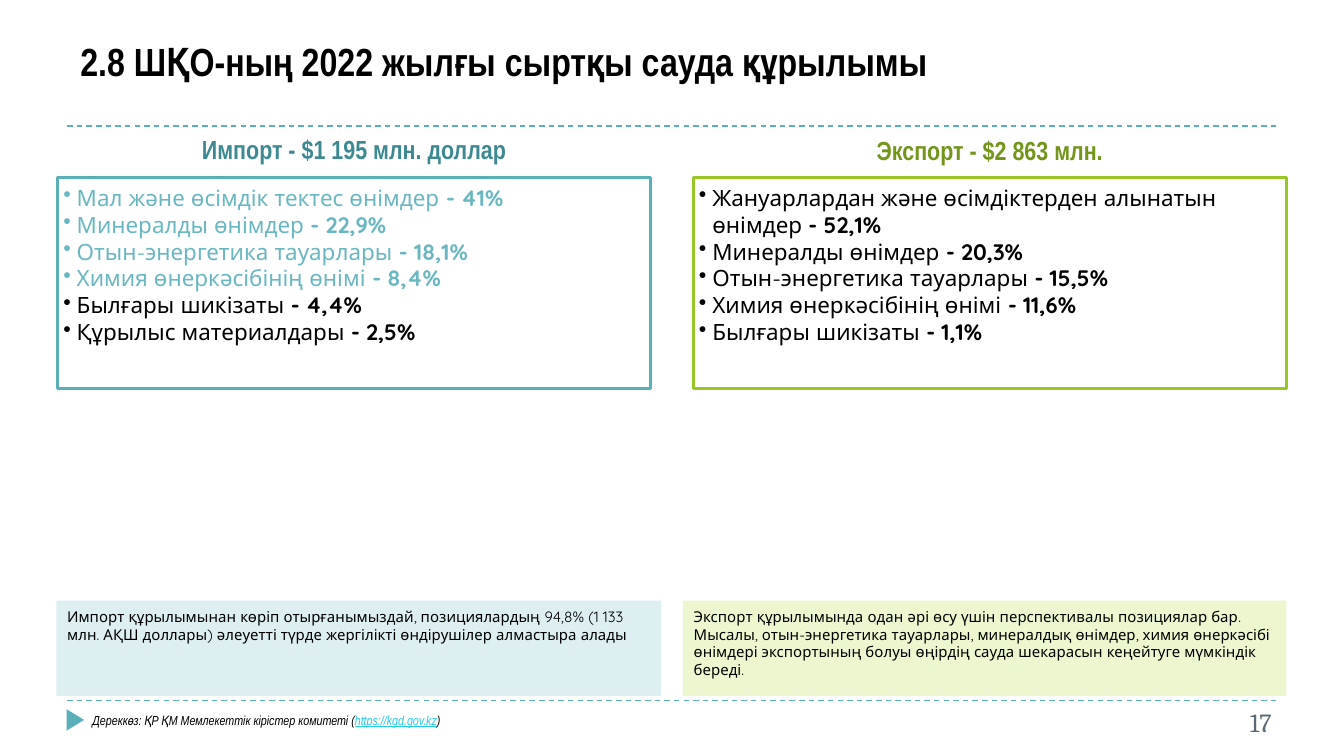
import pptx
import pptx.util
import pptx.dml.color
import pptx.enum.dml
import pptx.enum.shapes
import pptx.enum.text
import pptx.oxml.ns
import lxml.etree

Pt = pptx.util.Pt
SHAPE = pptx.enum.shapes.MSO_SHAPE
ALIGN = pptx.enum.text.PP_ALIGN
ANCHOR = pptx.enum.text.MSO_ANCHOR

COLORS = {
    "teal": "59B0B9", "teal_text": "69B7C0", "teal_dark": "3D8991", "teal_pale": "DEEFF1",
    "green": "98C723", "green_dark": "72951A", "green_pale": "ECF7D0",
    "black": "000000", "white": "FFFFFF", "gray": "5B6973", "link": "26CBEC",
}


def rgb(name):
    return pptx.dml.color.RGBColor.from_string(COLORS[name])


class SlideBuilder:
    head_font = "Arial Narrow"
    body_font = "Quicksand"
    number_font = "Cambria"

    def __init__(self, slide):
        self.s = slide

    def add_run(self, p, text, font, size, color="black", **style):
        r = p.add_run()
        r.text = text
        r.font.name = font
        r.font.size = Pt(size)
        r.font.color.rgb = rgb(color)
        for key, value in style.items():
            setattr(r.font, key, value)

    def set_frame(self, sp, insets, anchor=ANCHOR.TOP):
        tf = sp.text_frame
        tf.word_wrap = True
        tf.vertical_anchor = anchor
        tf.margin_left = tf.margin_right = Pt(insets[0])
        tf.margin_top = tf.margin_bottom = Pt(insets[1])
        return tf

    def text(self, box, align=ALIGN.LEFT, insets=(7.2, 3.6), anchor=ANCHOR.TOP):
        """Add a text box and return its first paragraph."""
        sp = self.s.shapes.add_textbox(*map(Pt, box))
        p = self.set_frame(sp, insets, anchor).paragraphs[0]
        p.alignment = align
        return p

    def shape(self, kind, box, fill, line=None):
        sp = self.s.shapes.add_shape(kind, *map(Pt, box))
        sp.shadow.inherit = False
        sp.fill.solid()
        sp.fill.fore_color.rgb = rgb(fill)
        if line:
            sp.line.color.rgb = rgb(line)
            sp.line.width = Pt(1.5)
        else:
            sp.line.fill.background()
        return sp

    def dashed_rule(self, y):
        c = self.s.shapes.add_connector(
            pptx.enum.shapes.MSO_CONNECTOR.STRAIGHT, Pt(36), Pt(y), Pt(684), Pt(y))
        c.line.color.rgb = rgb("teal")
        c.line.width = Pt(0.75)
        c.line.dash_style = pptx.enum.dml.MSO_LINE.DASH
        lxml.etree.SubElement(c._element.spPr, pptx.oxml.ns.qn("a:effectLst"))

    def bullet_box(self, box, line, items):
        """Add a framed list of (label, share, color) items."""
        tf = self.set_frame(self.shape(SHAPE.RECTANGLE, box, "white", line), (2.9, 3.6))
        for i, (label, share, color) in enumerate(items):
            p = tf.add_paragraph() if i else tf.paragraphs[0]
            p.alignment = ALIGN.LEFT
            pPr = p._p.get_or_add_pPr()
            pPr.set("marL", str(int(Pt(7.2))))
            pPr.set("indent", str(-int(Pt(7.2))))
            lxml.etree.SubElement(pPr, pptx.oxml.ns.qn("a:buChar")).set("char", "•")
            self.add_run(p, label + " ", self.body_font, 12, color)
            self.add_run(p, "- " + share, self.body_font, 12, color, bold=True)

    def note(self, box, fill, text):
        tf = self.set_frame(self.shape(SHAPE.RECTANGLE, box, fill), (5.8, 3.6))
        p = tf.paragraphs[0]
        p.alignment = ALIGN.LEFT
        self.add_run(p, text, self.body_font, 8)

    def heading(self, box, text, color):
        p = self.text(box, ALIGN.CENTER, (5.8, 0))
        self.add_run(p, text, self.head_font, 14, color, bold=True)


def main():
    prs = pptx.Presentation()
    prs.slide_width, prs.slide_height = Pt(720), Pt(405)
    b = SlideBuilder(prs.slides.add_slide(prs.slide_layouts[6]))

    # Rules and footer marker
    for y in (375.3, 67.6):
        b.dashed_rule(y)
    b.shape(SHAPE.ISOSCELES_TRIANGLE, (34.6, 381, 11.5, 9.4), "teal").rotation = 90

    # Title and page number
    p = b.text((36, 8.6, 556.6, 40.3), anchor=ANCHOR.BOTTOM)
    b.add_run(p, "2.8 ШҚО-ның 2022 жылғы сыртқы сауда құрылымы", b.head_font, 21, bold=True)
    p = b.text((651.6, 375.1, 36.7, 21.6), ALIGN.RIGHT)
    b.add_run(p, "17", b.number_font, 14, "gray")

    # Import and export columns
    columns = [
        {
            "x": 31, "heading_y": 71.3, "heading": "Импорт - $1 195 млн. доллар",
            "dark": "teal_dark", "line": "teal", "pale": "teal_pale",
            "note_x": 30.2, "note_w": 324,
            "items": [
                ("Мал және өсімдік тектес өнімдер", "41%", "teal_text"),
                ("Минералды өнімдер", "22,9%", "teal_text"),
                ("Отын-энергетика тауарлары", "18,1%", "teal_text"),
                ("Химия өнеркәсібінің өнімі", "8,4%", "teal_text"),
                ("Былғары шикізаты", "4,4%", "black"),
                ("Құрылыс материалдары", "2,5%", "black"),
            ],
            "note": "Импорт құрылымынан көріп отырғанымыздай, позициялардың 94,8% "
                    "(1 133 млн. АҚШ доллары) әлеуетті түрде жергілікті өндірушілер "
                    "алмастыра алады",
        },
        {
            "x": 371.5, "heading_y": 72, "heading": "Экспорт - $2 863 млн.",
            "dark": "green_dark", "line": "green", "pale": "green_pale",
            "note_x": 365.8, "note_w": 323.3,
            "items": [
                ("Жануарлардан және өсімдіктерден алынатын өнімдер", "52,1%", "black"),
                ("Минералды өнімдер", "20,3%", "black"),
                ("Отын-энергетика тауарлары", "15,5%", "black"),
                ("Химия өнеркәсібінің өнімі", "11,6%", "black"),
                ("Былғары шикізаты", "1,1%", "black"),
            ],
            "note": "Экспорт құрылымында одан әрі өсу үшін перспективалы позициялар бар. "
                    "Мысалы, отын-энергетика тауарлары, минералдық өнімдер, химия "
                    "өнеркәсібі өнімдері экспортының болуы өңірдің сауда шекарасын "
                    "кеңейтуге мүмкіндік береді.",
        },
    ]
    for col in columns:
        b.bullet_box((col["x"], 95, 317.5, 113), col["line"], col["items"])
        b.heading((col["x"], col["heading_y"], 317.5, 17.3), col["heading"], col["dark"])
        b.note((col["note_x"], 321.8, col["note_w"], 51.1), col["pale"], col["note"])

    # Data source
    p = b.text((42.5, 378, 544.3, 15.8))
    b.add_run(p, "Дереккөз: ҚР ҚМ Мемлекеттік кірістер комитеті (", b.head_font, 7, italic=True)
    b.add_run(p, "https://kgd.gov.kz", b.head_font, 7, "link", italic=True, underline=True)
    b.add_run(p, ")", b.head_font, 7, italic=True)

    prs.save("out.pptx")


if __name__ == "__main__":
    main()
